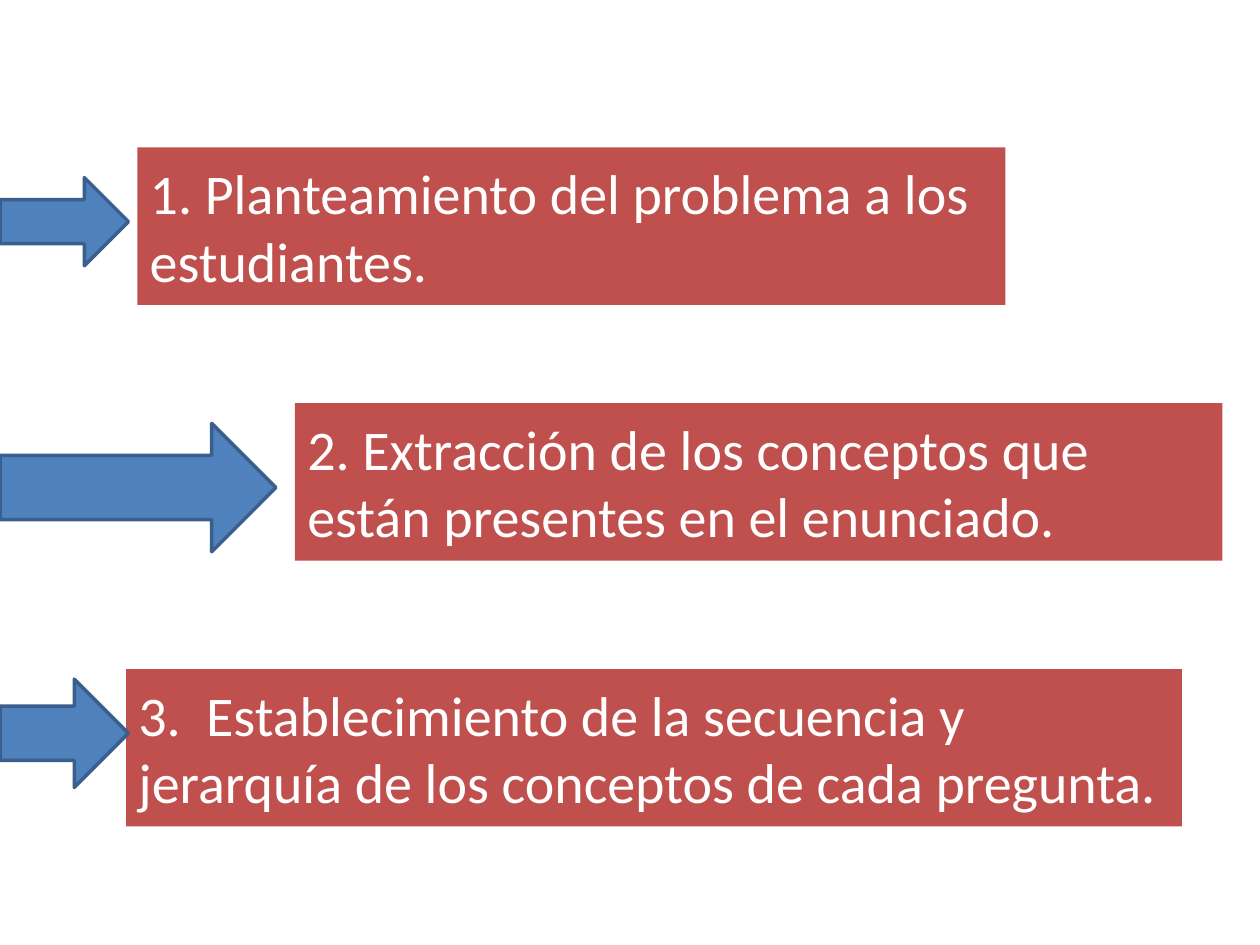
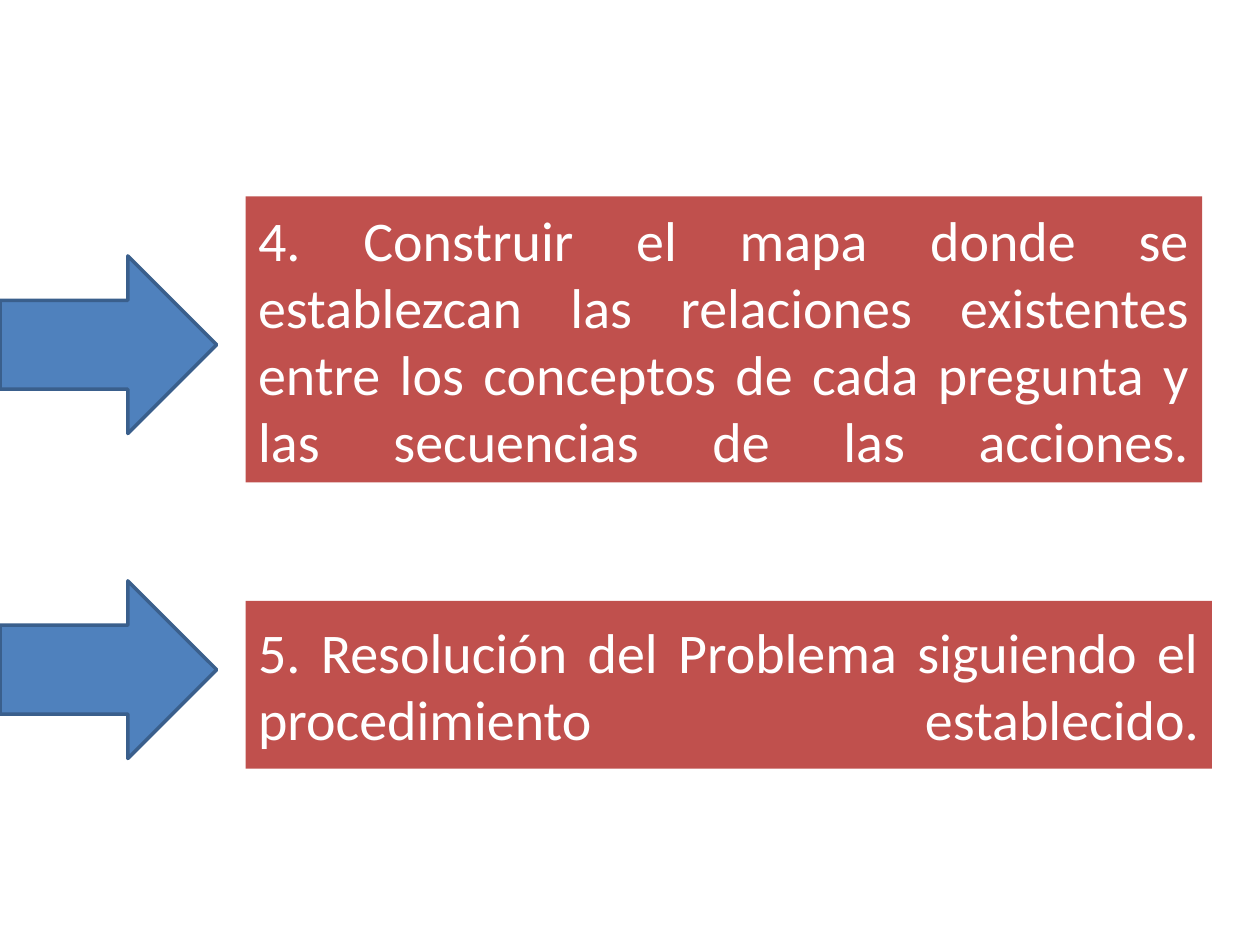
from pptx import Presentation
from pptx.dml.color import RGBColor
from pptx.enum.shapes import MSO_SHAPE
from pptx.enum.text import MSO_ANCHOR, PP_ALIGN
from pptx.util import Pt

RECTANGLE, RIGHT_ARROW = MSO_SHAPE.RECTANGLE, MSO_SHAPE.RIGHT_ARROW
MIDDLE = MSO_ANCHOR.MIDDLE
LEFT, JUSTIFY = PP_ALIGN.LEFT, PP_ALIGN.JUSTIFY

COLORS = {"card": "C0504D", "text": "FFFFFF", "arrow": "4F81BD", "outline": "3A5F8C"}
FONT, TEXT_SIZE = "Calibri", 32
BLANK_LAYOUT = 6

# Each step: text, card (left, top, width, height),
# arrow (offset from the card's top, width, height)
FIRST_STEPS = [
    ("1. Planteamiento del problema a los\vestudiantes.",
     (78.5, 84.2, 496, 90), (17.3, 73.4, 50.4)),
    ("2. Extracción de los conceptos que están presentes en el enunciado.",
     (168.5, 230.4, 530, 90), (11.5, 157.7, 73.4)),
    ("3.  Establecimiento de la secuencia y jerarquía de los conceptos de cada pregunta.",
     (72, 382.3, 603.4, 90), (5.8, 73.4, 61.9)),
]
# The closing line break stretches the last justified line; the opening one keeps it centred
LAST_STEPS = [
    ("\v4. Construir el mapa donde se establezcan las relaciones existentes "
     "entre los conceptos de cada pregunta y las secuencias de las acciones.\v",
     (140.4, 112.3, 546.5, 163.4), (33.9, 123.8, 101.5)),
    ("\v5. Resolución del Problema siguiendo el procedimiento establecido.\v",
     (140.4, 343.4, 552.2, 95.8), (-11.5, 123.8, 101.5)),
]


def color(name):
    return RGBColor.from_string(COLORS[name])


def add_filled_shape(page, kind, box, fill):
    shape = page.shapes.add_shape(kind, *(Pt(length) for length in box))
    shape.shadow.inherit = False
    shape.fill.solid()
    shape.fill.fore_color.rgb = color(fill)
    return shape


def add_card(page, box, text, alignment):
    card = add_filled_shape(page, RECTANGLE, box, "card")
    card.line.fill.background()
    frame = card.text_frame
    frame.word_wrap = True
    frame.vertical_anchor = MIDDLE
    frame.text = text
    para = frame.paragraphs[0]
    para.alignment = alignment
    # The paragraph font also sizes the line breaks
    for font in [para.font] + [span.font for span in para.runs]:
        font.name = FONT
        font.size = Pt(TEXT_SIZE)
        font.color.rgb = color("text")


def add_arrow(page, box):
    arrow = add_filled_shape(page, RIGHT_ARROW, box, "arrow")
    arrow.line.color.rgb = color("outline")
    arrow.line.width = Pt(2)


def add_steps_page(deck, steps, alignment):
    page = deck.slides.add_slide(deck.slide_layouts[BLANK_LAYOUT])
    # Step cards
    for text, box, _ in steps:
        add_card(page, box, text, alignment)
    # Arrows from the left edge of the slide
    for _, (_, card_top, _, _), (offset, width, height) in steps:
        add_arrow(page, (0, card_top + offset, width, height))


def main():
    deck = Presentation()
    deck.slide_width, deck.slide_height = Pt(720), Pt(540)
    add_steps_page(deck, FIRST_STEPS, LEFT)
    add_steps_page(deck, LAST_STEPS, JUSTIFY)
    deck.save("out.pptx")


if __name__ == "__main__":
    main()
